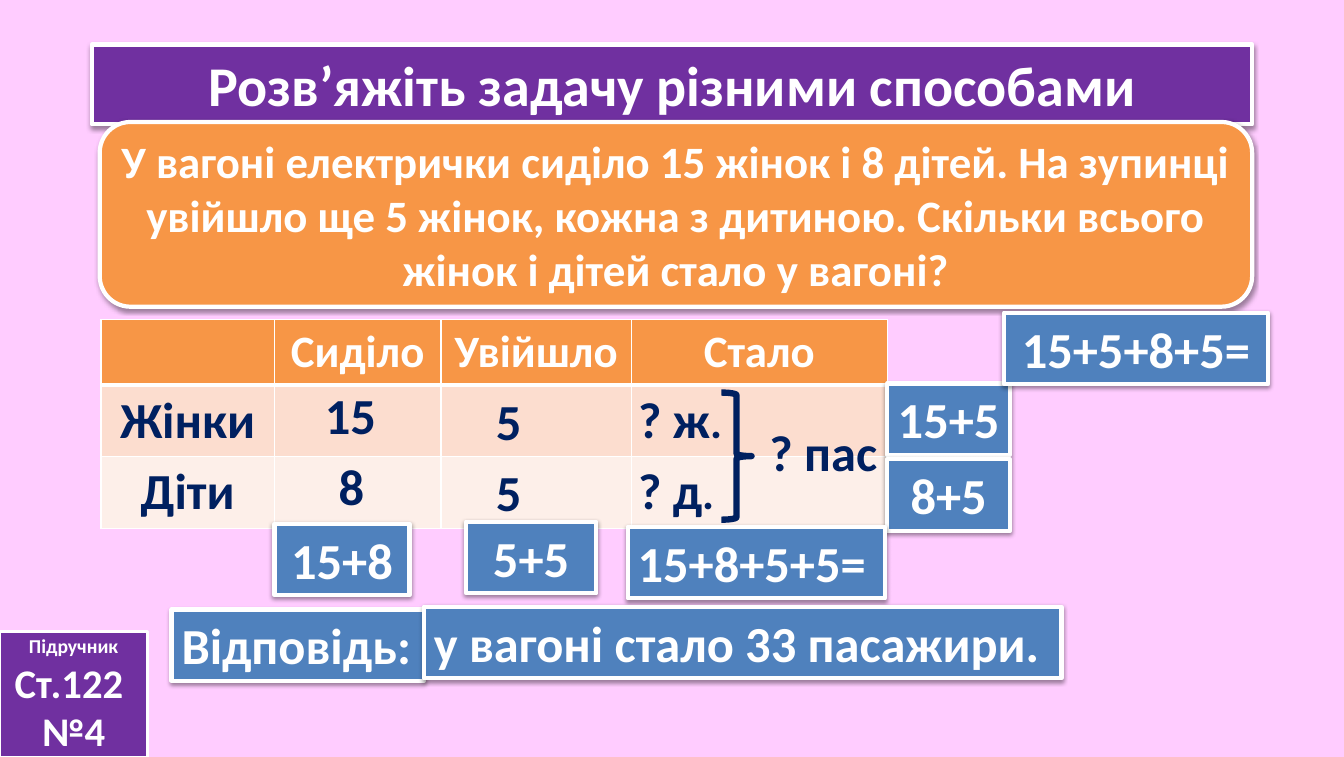
from dataclasses import dataclass

from lxml import etree
from pptx import Presentation
from pptx.dml.color import RGBColor
from pptx.enum.shapes import MSO_SHAPE
from pptx.enum.text import MSO_ANCHOR, MSO_AUTO_SIZE, PP_ALIGN
from pptx.oxml.ns import qn
from pptx.util import Cm, Pt

RECT, ROUNDED, BRACE = MSO_SHAPE.RECTANGLE, MSO_SHAPE.ROUNDED_RECTANGLE, MSO_SHAPE.RIGHT_BRACE
LEFT, CENTER = PP_ALIGN.LEFT, PP_ALIGN.CENTER
TOP, MIDDLE = MSO_ANCHOR.TOP, MSO_ANCHOR.MIDDLE


@dataclass(frozen=True)
class Theme:
    font: str = "Calibri"
    background: RGBColor = RGBColor(0xFF, 0xCC, 0xFF)
    purple: RGBColor = RGBColor(0x70, 0x30, 0xA0)
    orange: RGBColor = RGBColor(0xF7, 0x96, 0x46)
    blue: RGBColor = RGBColor(0x4F, 0x81, 0xBD)
    navy: RGBColor = RGBColor(0x00, 0x20, 0x60)
    white: RGBColor = RGBColor(0xFF, 0xFF, 0xFF)
    women_row: RGBColor = RGBColor(0xFC, 0xDD, 0xCF)
    children_row: RGBColor = RGBColor(0xFD, 0xEF, 0xE9)
    title: int = 40
    label: int = 36
    body: int = 32
    reference: int = 29
    small: int = 14


theme = Theme()


def write(frame, lines, color, align=CENTER):
    """Each line is a list of (text, size) runs."""
    for index, line in enumerate(lines):
        para = frame.paragraphs[0] if index == 0 else frame.add_paragraph()
        para.alignment = align
        for text, size in line:
            span = para.add_run()
            span.text = text
            span.font.name = theme.font
            span.font.size = Pt(size)
            span.font.bold = True
            span.font.color.rgb = color


def add_box(kind, place, fill, lines, align=CENTER, anchor=MIDDLE, border=3, shadow=True):
    box = page.shapes.add_shape(kind, *map(Cm, place))
    box.shadow.inherit = False
    box.fill.solid()
    box.fill.fore_color.rgb = fill
    box.line.color.rgb = theme.white
    box.line.width = Pt(border)
    if shadow:
        effects = box._element.spPr.find(qn("a:effectLst"))
        outer = etree.SubElement(effects, qn("a:outerShdw"), blurRad="40000", dist="20000",
                                 dir="5400000", rotWithShape="0")
        black = etree.SubElement(outer, qn("a:srgbClr"), val="000000")
        etree.SubElement(black, qn("a:alpha"), val="38000")
    box.text_frame.word_wrap = True
    box.text_frame.vertical_anchor = anchor
    write(box.text_frame, lines, theme.white, align)


deck = Presentation()
deck.slide_width, deck.slide_height = Cm(33.83), Cm(19.05)
page = deck.slides.add_slide(deck.slide_layouts[6])
page.background.fill.solid()
page.background.fill.fore_color.rgb = theme.background

# Title and problem
add_box(RECT, (2.31, 1.12, 29.21, 2.01), theme.purple,
        [[("Розв’яжіть задачу різними способами", theme.title)]])
add_box(ROUNDED, (2.51, 3.07, 29.01, 4.65), theme.orange,
        [[("У вагоні електрички сиділо 15 жінок і 8 дітей. На зупинці увійшло ще 5 жінок, "
           "кожна з дитиною. Скільки всього жінок і дітей стало у вагоні?", theme.body)]])

# Table
rows = [
    (["", "Сиділо", "Увійшло", "Стало"], theme.orange, theme.white, theme.body, 1.6),
    (["Жінки", "", "", ""], theme.women_row, theme.navy, theme.label, 1.78),
    (["Діти", "", "", ""], theme.children_row, theme.navy, theme.label, 1.78),
]
columns = [4.37, 4.19, 4.8, 6.43]
table = page.shapes.add_table(len(rows), len(columns), Cm(2.54), Cm(8.05),
                              Cm(sum(columns)), Cm(5.16)).table
for column, width in zip(table.columns, columns):
    column.width = Cm(width)
for row_index, (texts, fill, color, size, height) in enumerate(rows):
    table.rows[row_index].height = Cm(height)
    for column_index, text in enumerate(texts):
        cell = table.cell(row_index, column_index)
        for side in "LRTB":
            heavy = (row_index, side) in ((0, "B"), (1, "T"))
            edge = etree.SubElement(cell._tc.get_or_add_tcPr(), qn(f"a:ln{side}"),
                                    w=str(Pt(3 if heavy else 1)))
            paint = etree.SubElement(edge, qn("a:solidFill"))
            etree.SubElement(paint, qn("a:srgbClr"), val=str(theme.white))
        cell.fill.solid()
        cell.fill.fore_color.rgb = fill
        if text:
            write(cell.text_frame, [[(text, size)]], color)

# Values over the table
label_height = 1.8
values = [
    (19.1, 10.46, 3.25, [("? пас", theme.label)]),
    (15.8, 9.63, 2.64, [("? ж", theme.label), (".", theme.body)]),
    (15.8, 11.43, 2.44, [("? д", theme.label), (".", theme.body)]),
    (7.92, 9.55, 1.8, [("15", theme.label)]),
    (8.26, 11.33, 1.17, [("8", theme.label)]),
    (12.22, 9.7, 1.17, [("5", theme.label)]),
    (12.22, 11.48, 1.17, [("5", theme.label)]),
]
for left, top, width, line in values:
    box = page.shapes.add_textbox(Cm(left), Cm(top), Cm(width), Cm(label_height))
    box.text_frame.word_wrap = False
    box.text_frame.auto_size = MSO_AUTO_SIZE.SHAPE_TO_FIT_TEXT
    write(box.text_frame, [line], theme.navy)

# Brace joining women and children
brace = page.shapes.add_shape(BRACE, Cm(18.16), Cm(9.88), Cm(0.76), Cm(3.2))
brace.shadow.inherit = False
brace.fill.background()
brace.line.color.rgb = theme.navy
brace.line.width = Pt(4.5)

# Sums and answer
sums = [
    (22.33, 9.65, 3.1, "15+5", CENTER),
    (22.33, 11.56, 3.1, "8+5", CENTER),
    (11.73, 13.13, 3.28, "5+5", CENTER),
    (15.8, 13.26, 6.48, "15+8+5+5=", LEFT),
    (4.32, 15.34, 6.35, "Відповідь:", LEFT),
    (10.67, 15.27, 16.05, "у вагоні стало 33 пасажири.", LEFT),
    (25.27, 7.87, 6.65, "15+5+8+5=", CENTER),
    (6.91, 13.18, 3.4, "15+8", CENTER),
]
for left, top, width, text, align in sums:
    add_box(RECT, (left, top, width, label_height), theme.blue,
            [[(text, theme.label)]], align, TOP)

# Textbook reference
add_box(RECT, (0, 15.9, 3.71, 3.15), theme.purple,
        [[("Підручник", theme.small)], [("Ст.122 ", theme.reference)], [("№4", theme.reference)]],
        border=2, shadow=False)

deck.save("out.pptx")
